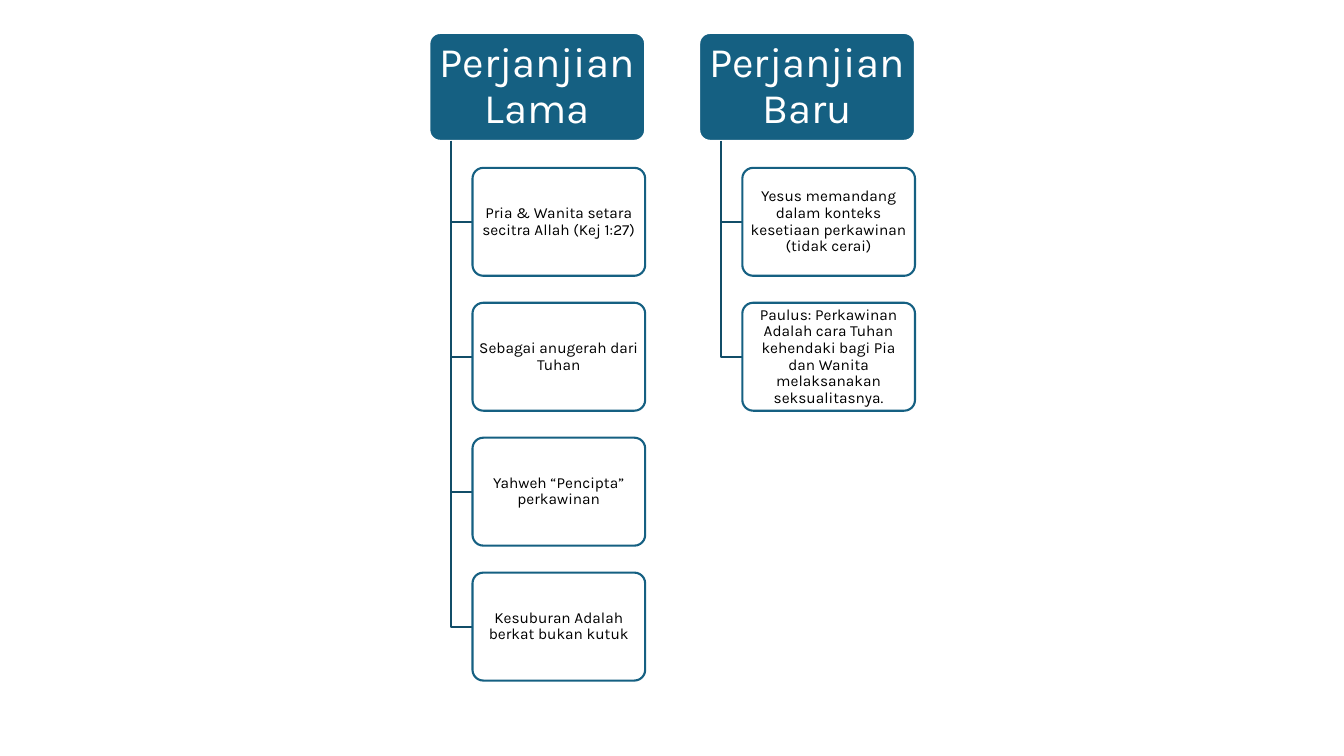
from lxml.etree import SubElement
from pptx import Presentation
from pptx.dml.color import RGBColor
from pptx.enum.shapes import MSO_SHAPE as Preset
from pptx.enum.text import MSO_ANCHOR as Anchor, PP_ALIGN as Align
from pptx.oxml.ns import qn
from pptx.util import Cm, Pt

TESTAMENTS = [
    ("Perjanjian Lama", [
        "Pria & Wanita setara secitra Allah (Kej 1:27)",
        "Sebagai anugerah dari Tuhan",
        "Yahweh “Pencipta” perkawinan",
        "Kesuburan Adalah berkat bukan kutuk",
    ]),
    ("Perjanjian Baru", [
        "Yesus memandang dalam konteks kesetiaan perkawinan (tidak cerai)",
        "Paulus: Perkawinan Adalah cara Tuhan kehendaki bagi Pia dan Wanita "
        "melaksanakan seksualitasnya.",
    ]),
]
COLORS = {"teal": "156082", "branch": "114D68", "white": "FFFFFF", "black": "000000"}
HEADING = {"fill": "teal", "line": "white", "text": "white", "size": 30,
           "inset_x": 0.1, "inset_y": 0.1, "opacity": 100}
TOPIC = {"fill": "white", "line": "teal", "text": "black", "size": 11,
         "inset_x": 0.05, "inset_y": 0.05, "opacity": 90}

LEFT, TOP = 10.82, 0.83
WIDTH, HEIGHT = 5.44, 2.72
COLUMN_STEP, ROW_STEP = 6.8, 1.25 * HEIGHT
TRUNK, INDENT = 0.1 * WIDTH, 0.2 * WIDTH


def color(name):
    return RGBColor.from_string(COLORS[name])


def set_line(shape, name):
    shape.shadow.inherit = False
    shape.line.color.rgb = color(name)
    shape.line.width = Pt(1.5)


def add_box(page, text, left, top, width, style):
    box = page.shapes.add_shape(Preset.ROUNDED_RECTANGLE, Cm(left), Cm(top), Cm(width), Cm(HEIGHT))
    box.adjustments[0] = 0.1
    box.fill.solid()
    box.fill.fore_color.rgb = color(style["fill"])
    if style["opacity"] < 100:
        fill_color = box._element.spPr.find(qn("a:solidFill"))[0]
        SubElement(fill_color, qn("a:alpha"), val=str(style["opacity"] * 1000))
    set_line(box, style["line"])
    frame = box.text_frame
    frame_format = {
        "word_wrap": True, "vertical_anchor": Anchor.MIDDLE,
        "margin_left": Cm(style["inset_x"]), "margin_right": Cm(style["inset_x"]),
        "margin_top": Cm(style["inset_y"]), "margin_bottom": Cm(style["inset_y"]),
    }
    for name, value in frame_format.items():
        setattr(frame, name, value)
    para = frame.paragraphs[0]
    para.alignment = Align.CENTER
    para.line_spacing = 0.9
    span = para.add_run()
    span.text = text
    for name, value in {"name": "Karla", "size": Pt(style["size"])}.items():
        setattr(span.font, name, value)
    span.font.color.rgb = color(style["text"])


def add_branch(page, left, top, right, bottom):
    builder = page.shapes.build_freeform(Cm(left), Cm(top))
    builder.add_line_segments([(Cm(left), Cm(bottom)), (Cm(right), Cm(bottom))], close=False)
    branch = builder.convert_to_shape()
    branch.fill.background()
    set_line(branch, "branch")


def main():
    deck = Presentation()
    deck.slide_width, deck.slide_height = Cm(33.87), Cm(19.05)
    page = deck.slides.add_slide(deck.slide_layouts[6])
    for column, (heading, topics) in enumerate(TESTAMENTS):
        left = LEFT + column * COLUMN_STEP
        add_box(page, heading, left, TOP, WIDTH, HEADING)
        for row, topic in enumerate(topics, start=1):
            top = TOP + row * ROW_STEP
            add_branch(page, left + TRUNK, TOP + HEIGHT, left + INDENT, top + HEIGHT / 2)
            add_box(page, topic, left + INDENT, top, WIDTH - INDENT, TOPIC)
    deck.save("out.pptx")


if __name__ == "__main__":
    main()
